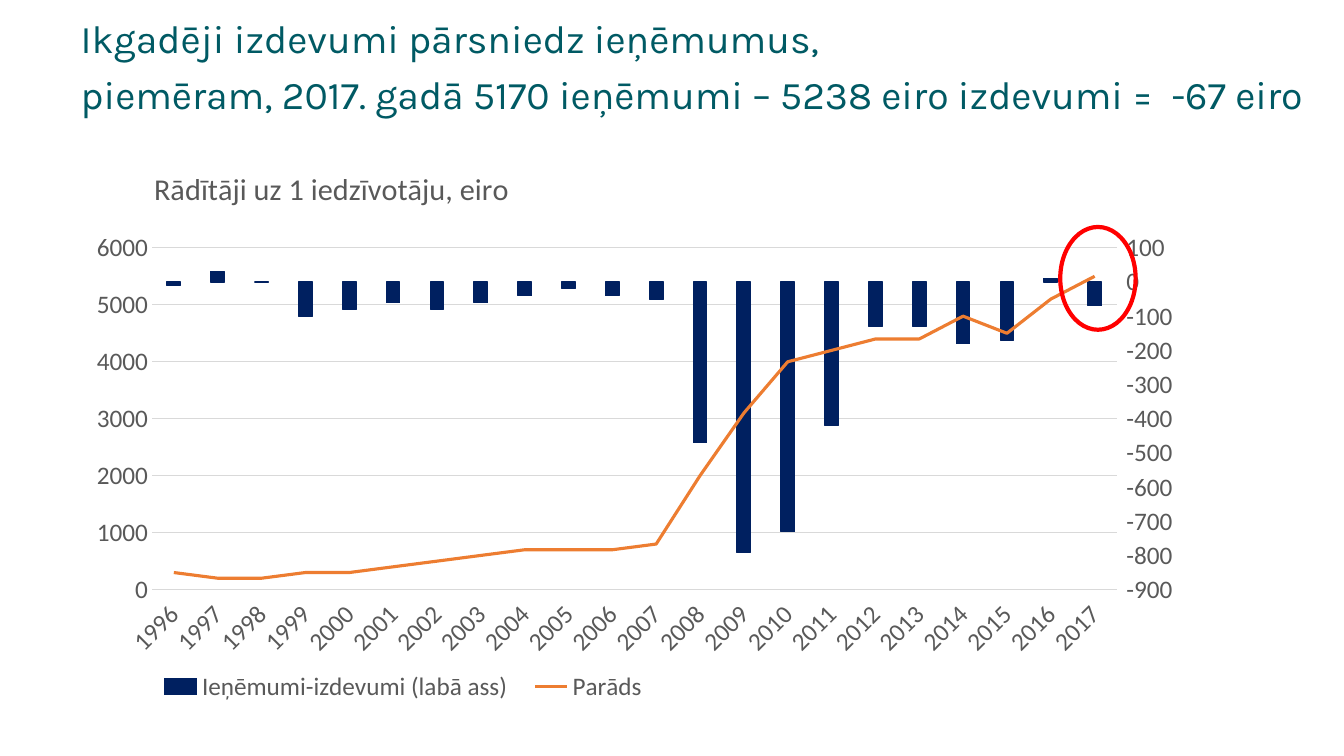
from copy import deepcopy

from lxml import etree
from pptx import Presentation
from pptx.chart.data import CategoryChartData
from pptx.dml.color import RGBColor
from pptx.enum.chart import XL_CHART_TYPE, XL_LEGEND_POSITION, XL_TICK_LABEL_POSITION, XL_TICK_MARK
from pptx.enum.shapes import MSO_SHAPE
from pptx.enum.text import MSO_ANCHOR, MSO_AUTO_SIZE, PP_ALIGN
from pptx.oxml import parse_xml
from pptx.oxml.ns import nsdecls, qn
from pptx.util import Cm, Pt

COLUMNS = XL_CHART_TYPE.COLUMN_CLUSTERED
BOTTOM = XL_LEGEND_POSITION.BOTTOM
LABELS_LOW = XL_TICK_LABEL_POSITION.LOW
NO_TICK = XL_TICK_MARK.NONE
TICK_OUTSIDE = XL_TICK_MARK.OUTSIDE
ELLIPSE = MSO_SHAPE.OVAL
TOP = MSO_ANCHOR.TOP
NO_AUTOFIT = MSO_AUTO_SIZE.NONE
LEFT = PP_ALIGN.LEFT

# Content
HEADING = [
    "Ikgadēji izdevumi pārsniedz ieņēmumus,",
    "piemēram, 2017. gadā 5170 ieņēmumi – 5238 eiro izdevumi =  -67 eiro",
]
CHART_TITLE = "Rādītāji uz 1 iedzīvotāju, eiro"
YEARS = [str(year) for year in range(1996, 2018)]
BALANCE_NAME = "Ieņēmumi-izdevumi (labā ass)"
BALANCE = [-10, 30, 0, -100, -80, -60, -80, -60, -40, -20, -40,
           -50, -470, -790, -730, -420, -130, -130, -180, -170, 10, -70]
DEBT_NAME = "Parāds"
DEBT = [300, 200, 200, 300, 300, 400, 500, 600, 700, 700, 700,
        800, 2000, 3100, 4000, 4200, 4400, 4400, 4800, 4500, 5100, 5500]

COLORS = {"heading": "005A64", "label": "595959", "grid": "D9D9D9",
          "balance": "002060", "debt": "ED7D31", "highlight": "FF0000"}
CHART_FONT = "Calibri"
HEADING_FONT = "Karla"
BALANCE_AXES = {"c:catAx": "50010", "c:valAx": "50020"}


def color(name):
    return RGBColor.from_string(COLORS[name])


def style_font(font, name, size, color_name):
    font.name = name
    font.size = Pt(size)
    font.bold = False
    font.color.rgb = color(color_name)


def style_line(line, color_name, width):
    line.color.rgb = color(color_name)
    line.width = Pt(width)


def set_layout(element, x, y, width=None, height=None, inner=False):
    """Place a chart part by percentages of the chart area."""
    for old_layout in element.findall(qn("c:layout")):
        element.remove(old_layout)
    settings = [("layoutTarget", "inner")] if inner else []
    settings += [("xMode", "edge"), ("yMode", "edge"), ("x", x / 100), ("y", y / 100)]
    if width:
        settings += [("w", width / 100), ("h", height / 100)]
    children = "".join(f'<c:{tag} val="{value}"/>' for tag, value in settings)
    layout = parse_xml(f'<c:layout {nsdecls("c")}><c:manualLayout>{children}'
                       '</c:manualLayout></c:layout>')
    previous = [child for child in element
                if child.tag in (qn("c:tx"), qn("c:legendPos"))]
    if previous:
        previous[-1].addnext(layout)
    else:
        element.insert(0, layout)


def split_axes(chart):
    """Give the balance columns their own right axis and draw the debt as a line."""
    plot_area = chart.plots[0]._element.getparent()
    bar_chart = plot_area.find(qn("c:barChart"))
    line_chart = parse_xml(f'<c:lineChart {nsdecls("c")}><c:grouping val="standard"/>'
                           '<c:varyColors val="0"/></c:lineChart>')
    debt = bar_chart.findall(qn("c:ser"))[1]
    debt.remove(debt.find(qn("c:invertIfNegative")))
    line_chart.append(debt)
    etree.SubElement(line_chart, qn("c:marker")).set("val", "1")
    bar_chart.addnext(line_chart)

    debt_axes = [plot_area.find(qn(tag)) for tag in BALANCE_AXES]
    balance_axes = [deepcopy(axis) for axis in debt_axes]
    own_ids = list(BALANCE_AXES.values())
    for axis, own_id, cross_id in zip(balance_axes, own_ids, reversed(own_ids)):
        axis.find(qn("c:axId")).set("val", own_id)
        axis.find(qn("c:crossAx")).set("val", cross_id)
    for axis_id, own_id in zip(bar_chart.findall(qn("c:axId")), own_ids):
        line_chart.append(deepcopy(axis_id))
        axis_id.set("val", own_id)

    # python-pptx exposes the first category axis and the second value axis
    debt_axes[0].addprevious(balance_axes[0])
    debt_axes[1].addnext(balance_axes[1])
    chart.category_axis.visible = False
    balance_axis = chart.value_axis
    balance_axis.has_major_gridlines = False
    balance_axis.major_tick_mark = TICK_OUTSIDE
    balance_axis.minimum_scale, balance_axis.maximum_scale = -900, 100
    balance_axis.major_unit = 100
    balance_axis._element.find(qn("c:axPos")).set("val", "r")
    balance_axis._element.find(qn("c:crosses")).set("val", "max")


presentation = Presentation()
presentation.slide_width, presentation.slide_height = Cm(33.87), Cm(19.05)
slide = presentation.slides.add_slide(presentation.slide_layouts[1])
title = slide.shapes.title
title._element.getparent().remove(title._element)

# Heading
heading = slide.placeholders[1]
heading.left, heading.top, heading.width, heading.height = Cm(1.78), Cm(0.36), Cm(32.08), Cm(18.69)
frame = heading.text_frame
frame.word_wrap = True
frame.auto_size = NO_AUTOFIT
frame.vertical_anchor = TOP
frame.text = "\n".join(HEADING)
for index, paragraph in enumerate(frame.paragraphs):
    properties = paragraph._p.get_or_add_pPr()
    properties.set("marL", "0")
    properties.set("indent", "0")
    etree.SubElement(properties, qn("a:buNone"))
    paragraph.alignment = LEFT
    paragraph.line_spacing = 0.9
    paragraph.space_before = Pt(10 if index else 0)
    style_font(paragraph.runs[0].font, HEADING_FONT, 28, "heading")

# Chart
chart_data = CategoryChartData(number_format="0")
chart_data.categories = YEARS
chart_data.add_series(BALANCE_NAME, BALANCE)
chart_data.add_series(DEBT_NAME, DEBT)
chart = slide.shapes.add_chart(COLUMNS, Cm(1.85), Cm(3.96), Cm(28.27), Cm(13.94), chart_data).chart
style_font(chart.font, CHART_FONT, 18, "label")

chart.has_title = True
chart.chart_title.text_frame.text = CHART_TITLE
style_font(chart.chart_title.text_frame.paragraphs[0].runs[0].font, CHART_FONT, 21.6, "label")
chart.chart_title.include_in_layout = False
set_layout(chart.chart_title._element, 6.7, 0.8)

chart.has_legend = True
chart.legend.position = BOTTOM
chart.legend.include_in_layout = False
style_font(chart.legend.font, CHART_FONT, 18, "label")
set_layout(chart.legend._element, 6.4, 91.7, 46, 8)

plot = chart.plots[0]
plot.gap_width = 219
plot.overlap = -27
plot.vary_by_categories = False
balance_series, debt_series = plot.series
balance_series.invert_if_negative = False
debt_series.invert_if_negative = False
balance_series.format.fill.solid()
balance_series.format.fill.fore_color.rgb = color("balance")
style_line(balance_series.format.line, "balance", 0.75)
style_line(debt_series.format.line, "debt", 2.25)

for axis in (chart.category_axis, chart.value_axis):
    axis.major_tick_mark = axis.minor_tick_mark = NO_TICK
    axis.format.line.fill.background()
    style_font(axis.tick_labels.font, CHART_FONT, 18, "label")
chart.category_axis.tick_label_position = LABELS_LOW
chart.category_axis._element.find(qn("c:txPr")).find(qn("a:bodyPr")).set("rot", "-2700000")
debt_axis = chart.value_axis
debt_axis.minimum_scale, debt_axis.maximum_scale, debt_axis.major_unit = 0, 6000, 1000
debt_axis.tick_labels.number_format = "0"
debt_axis.tick_labels.number_format_is_linked = False
style_line(debt_axis.major_gridlines.format.line, "grid", 0.75)

split_axes(chart)
set_layout(plot._element.getparent(), 7, 16.4, 86, 61.8, inner=True)
line_series = chart.plots[1].series[0]
line_series.smooth = False
marker = parse_xml(f'<c:marker {nsdecls("c")}><c:symbol val="none"/></c:marker>')
line_series._element.find(qn("c:spPr")).addnext(marker)

# Highlight around 2017
highlight = slide.shapes.add_shape(ELLIPSE, Cm(26.72), Cm(5.72), Cm(1.9), Cm(2.59))
highlight.shadow.inherit = False
highlight.fill.background()
style_line(highlight.line, "highlight", 3)

presentation.save("out.pptx")
